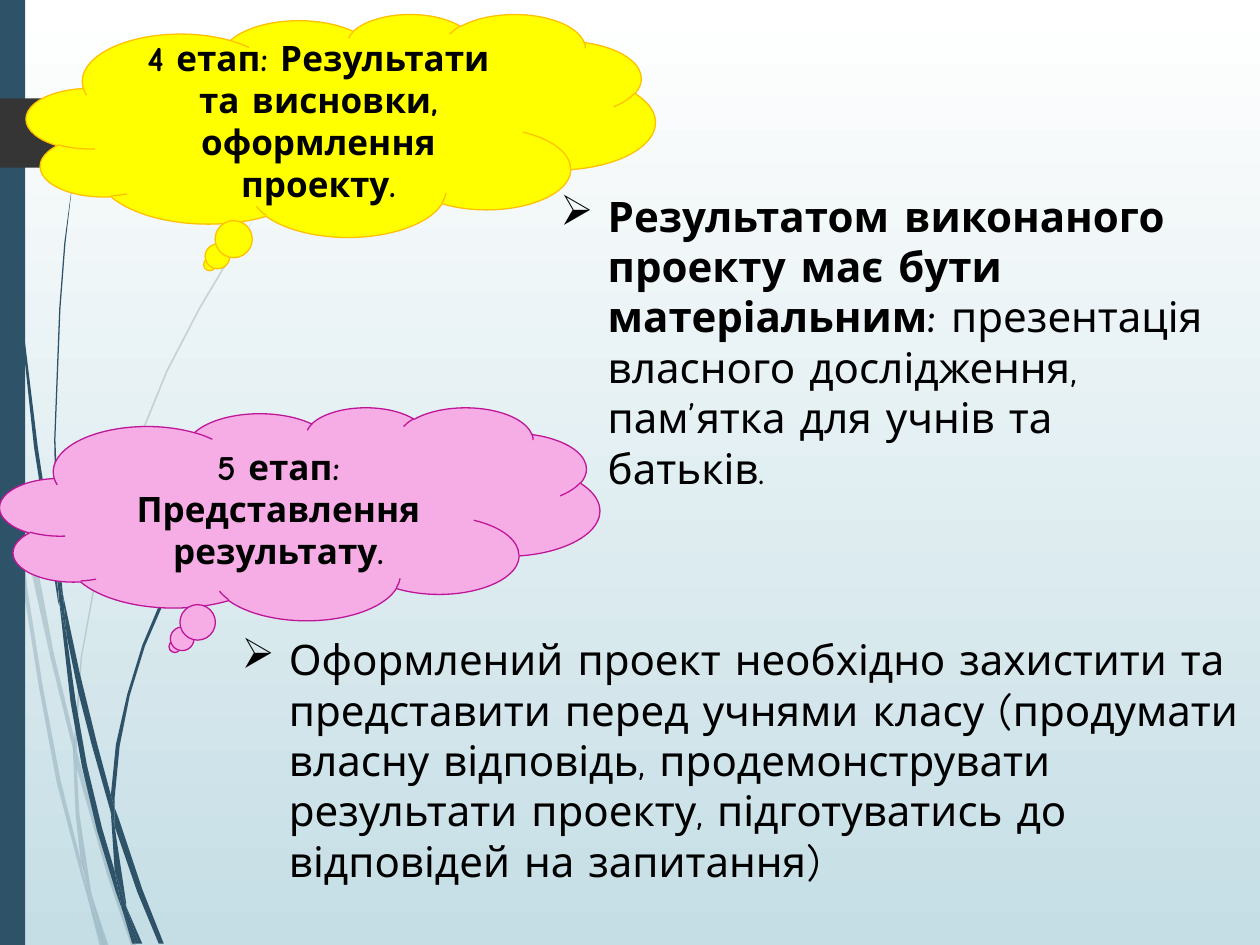
import pptx
import pptx.util
import pptx.dml.color
import pptx.enum.shapes
import pptx.enum.text
import pptx.oxml.ns
from dataclasses import dataclass
from lxml import etree

Pt = pptx.util.Pt
FONT = "Comic Neue"
TEAL = "2E5369"
BLACK = "000000"
UNIT = Pt(0.72)

PALE = [
    [(8, 350), (6, 322), (0, 282), (0, 299), (7, 344)],
    [(40, 522), (59, 599), (59, 586), (43, 520), (25, 425), (10, 345), (12, 376), (24, 450)],
    [(64, 607), (61, 596), (61, 610), (85, 694), (104, 750), (108, 750), (88, 692)],
    [(83, 750), (86, 750), (73, 711)],
    [(64, 683), (48, 619), (34, 545), (22, 469), (12, 376), (8, 350), (12, 410), (19, 470),
     (31, 546), (45, 621), (64, 693), (70, 714), (69, 707)],
    [(58, 599), (60, 646), (64, 683), (67, 692), (73, 711), (72, 706), (63, 646), (61, 610),
     (61, 608)],
    [(61, 584), (65, 522), (76, 462), (92, 404), (111, 349), (133, 295), (159, 245), (187, 198),
     (201, 175), (217, 154), (217, 153), (201, 175), (186, 197), (158, 244), (132, 294),
     (110, 348), (91, 403), (75, 461), (64, 522), (59, 584), (59, 586), (61, 596)],
    [(70, 714), (79, 750), (82, 750)],
    [(61, 608), (61, 610), (61, 596), (59, 586), (58, 599)],
    [(67, 692), (65, 683), (69, 707), (70, 714), (82, 750), (83, 750), (73, 711)],
]
DARK = [
    [(5, 110), (14, 233), (27, 355), (46, 477), (47, 481), (45, 457), (45, 453), (30, 355),
     (15, 232), (6, 109), (4, 48), (3, 0), (2, 0), (3, 48)],
    [(73, 592), (88, 645), (88, 633), (88, 631), (77, 590), (63, 533), (50, 472), (53, 505),
     (62, 549)],
    [(94, 649), (91, 641), (91, 656), (109, 708), (126, 749), (130, 749), (113, 706)],
    [(91, 691), (81, 657), (69, 607), (60, 556), (53, 505), (47, 477), (56, 557), (65, 608),
     (77, 659), (92, 708), (97, 722), (96, 717)],
    [(50, 472), (48, 453), (44, 349), (48, 245), (52, 193), (58, 141), (51, 193), (47, 245),
     (43, 349), (45, 449), (49, 472)],
    [(110, 749), (113, 749), (100, 719)],
    [(47, 477), (53, 505), (50, 472), (49, 472), (45, 449), (45, 453)],
    [(91, 633), (95, 592), (103, 552), (115, 513), (131, 476), (149, 440), (169, 406),
     (191, 374), (203, 359), (216, 344), (215, 344), (203, 358), (191, 373), (168, 405),
     (147, 439), (129, 474), (113, 512), (101, 551), (92, 591), (88, 631), (91, 641)],
    [(97, 722), (105, 749), (108, 749)],
    [(88, 645), (91, 691), (96, 706), (100, 719), (100, 716), (91, 656), (90, 651)],
    [(88, 645), (90, 651), (91, 656), (91, 641), (88, 631), (88, 633)],
    [(96, 706), (91, 691), (96, 717), (97, 722), (108, 749), (110, 749), (100, 719)],
]
TAG = [(149, 107), (124, 132), (123, 133), (121, 133), (0, 133), (0, 78), (121, 78), (123, 79),
       (124, 79), (149, 104), (150, 106)]


@dataclass
class Box:
    x: float
    y: float
    w: float
    h: float

    def span(self) -> list:
        return [Pt(n) for n in (self.x, self.y, self.w, self.h)]


@dataclass
class Cloud:
    box: Box
    fill: str
    line: str
    text: str


@dataclass
class Note:
    box: Box
    runs: list[tuple[str, bool]]


CLOUDS = [
    Cloud(Box(15.1, 7.9, 359.3, 127.4), "FFFF00", "FFC000",
          "4 етап: Результати та висновки, оформлення проекту."),
    Cloud(Box(0, 232.6, 342.7, 121.7), "F6ADE5", "BF1698",
          "5 етап: Представлення результату."),
]
NOTES = [
    Note(Box(131, 358.6, 589, 181.4),
         [("Оформлений проект необхідно захистити та представити перед учнями класу "
           "(продумати власну відповідь, продемонструвати результати проекту, "
           "підготуватись до відповідей на запитання)", False)]),
    Note(Box(313.2, 105.1, 386.6, 152.6),
         [("Результатом виконаного проекту має бути матеріальним: ", True),
          ("презентація власного дослідження, пам’ятка для учнів та батьків.", False)]),
]


def tint(code: str) -> pptx.dml.color.RGBColor:
    return pptx.dml.color.RGBColor.from_string(code)


def paint(shape, code: str) -> None:
    shape.shadow.inherit = False
    shape.fill.solid()
    shape.fill.fore_color.rgb = tint(code)
    shape.line.fill.background()


def style(run, size: float, bold: bool) -> None:
    run.font.name = FONT
    run.font.size = Pt(size)
    run.font.bold = bold
    run.font.color.rgb = tint(BLACK)


def trace(slide, dots: list[tuple[int, int]], code: str, alpha: int = 100) -> None:
    pen = slide.shapes.build_freeform(*dots[0], scale=UNIT)
    pen.add_line_segments(dots[1:], close=True)
    shape = pen.convert_to_shape()
    paint(shape, code)
    if alpha < 100:
        node = next(shape.element.spPr.iter(pptx.oxml.ns.qn("a:srgbClr")))
        etree.SubElement(node, pptx.oxml.ns.qn("a:alpha"), val=str(alpha * 1000))


def puff(slide, cloud: Cloud) -> None:
    kind = pptx.enum.shapes.MSO_SHAPE.CLOUD_CALLOUT
    shape = slide.shapes.add_shape(kind, *cloud.box.span())
    paint(shape, cloud.fill)
    shape.line.color.rgb = tint(cloud.line)
    shape.line.width = Pt(0.75)
    frame = shape.text_frame
    frame.text = cloud.text
    frame.word_wrap = True
    frame.vertical_anchor = pptx.enum.text.MSO_ANCHOR.MIDDLE
    para = frame.paragraphs[0]
    para.alignment = pptx.enum.text.PP_ALIGN.CENTER
    style(para.runs[0], 20, True)


def write(slide, note: Note) -> None:
    frame = slide.shapes.add_textbox(*note.box.span()).text_frame
    frame.word_wrap = True
    frame.auto_size = pptx.enum.text.MSO_AUTO_SIZE.SHAPE_TO_FIT_TEXT
    para = frame.paragraphs[0]
    for text, bold in note.runs:
        run = para.add_run()
        run.text = text
        style(run, 24, bold)
    props = para._p.get_or_add_pPr()
    props.set("marL", str(Pt(27)))
    props.set("indent", str(-Pt(27)))
    etree.SubElement(props, pptx.oxml.ns.qn("a:buChar"), char="➢")


def main() -> None:
    deck = pptx.Presentation()
    deck.slide_width, deck.slide_height = Pt(720), Pt(540)
    slide = deck.slides.add_slide(deck.slide_layouts[6])
    back = slide.background.fill
    back.gradient()
    back.gradient_angle = 270
    for stop, code in zip(back.gradient_stops, ("FFFFFF", "C5DEE5")):
        stop.color.rgb = tint(code)
    for dots in PALE:
        trace(slide, dots, TEAL, 20)
    for dots in DARK:
        trace(slide, dots, TEAL)
    kind = pptx.enum.shapes.MSO_SHAPE.RECTANGLE
    paint(slide.shapes.add_shape(kind, *Box(0, 0, 14.4, 540).span()), TEAL)
    trace(slide, TAG, "353535")
    puff(slide, CLOUDS[0])
    for note in NOTES:
        write(slide, note)
    puff(slide, CLOUDS[1])
    deck.save("out.pptx")


if __name__ == "__main__":
    main()
